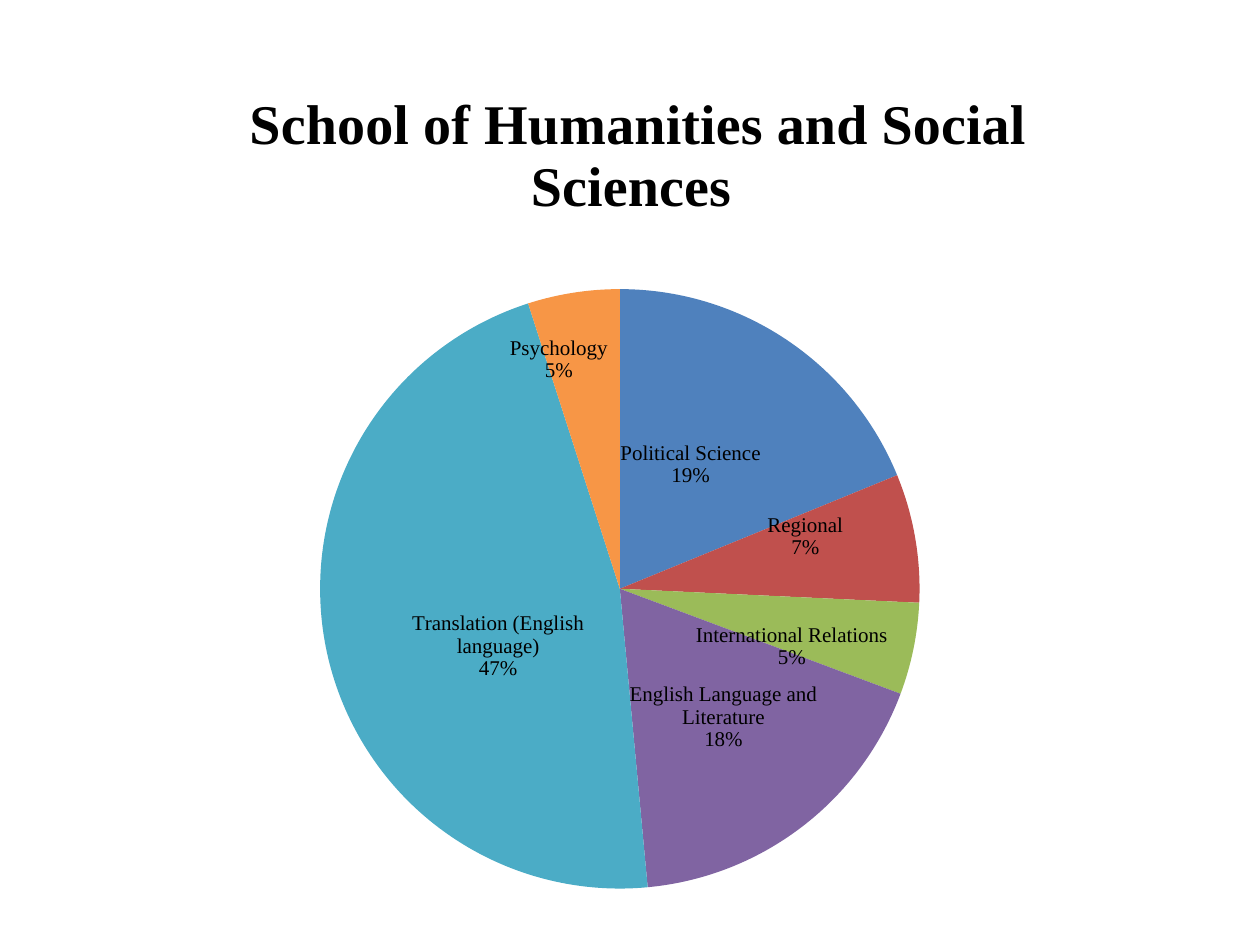
from dataclasses import dataclass

from lxml import etree
from pptx import Presentation
from pptx.chart.data import CategoryChartData
from pptx.dml.color import RGBColor
from pptx.enum.chart import XL_CHART_TYPE, XL_LABEL_POSITION
from pptx.oxml.ns import qn
from pptx.util import Cm, Pt

PIE = XL_CHART_TYPE.PIE
CENTER = XL_LABEL_POSITION.CENTER


@dataclass(frozen=True)
class Theme:
    text: str = "000000"
    chart_font: str = "Calibri"
    heading_font: str = "Times New Roman"
    chart_size: int = 10
    label_size: int = 12
    title_size: int = 32


THEME = Theme()
TITLE = "School of Humanities and Social Sciences "

# Programme, share, slice colour, label shift (fractions of the chart)
PROGRAMMES = [
    ("Political Science", 19, "4F81BD", (-0.01, 0)),
    ("Regional", 7, "C0504D", (0.03, -0.03)),
    ("International relations", 5, "9BBB59", (0.02, 0.03)),
    ("English Language and Literature", 18, "8064A2", (0.01, 0.01)),
    ("Translation (English language)", 47, "4BACC6", (0.02, 0.03)),
    ("Psychology", 5, "F79646", (-0.03, -0.09)),
]
CUSTOM_LABELS = {2: "International Relations\n5%"}


def style_font(font, name, size, bold=False):
    font.name = name
    font.size = Pt(size)
    font.bold = bold
    font.color.rgb = RGBColor.from_string(THEME.text)


def make_layout(**values):
    """Build a manual chart layout from its named settings."""
    layout = etree.Element(qn("c:layout"))
    manual = etree.SubElement(layout, qn("c:manualLayout"))
    for name, value in values.items():
        etree.SubElement(manual, qn(f"c:{name}")).set("val", str(value))
    return layout


def replace_layout(parent, layout, position):
    for old in parent.findall(qn("c:layout")):
        parent.remove(old)
    parent.insert(position, layout)


def add_separator(element):
    """Put the percentage on a line below the category name."""
    separator = etree.Element(qn("c:separator"))
    separator.text = "\n"
    element.find(qn("c:showBubbleSize")).addnext(separator)


def add_pie(slide):
    data = CategoryChartData()
    data.categories = [name for name, *_ in PROGRAMMES]
    data.add_series("Series 1", [share for _, share, *_ in PROGRAMMES])
    frame = slide.shapes.add_chart(PIE, Cm(0), Cm(0.79), Cm(25.4), Cm(18.26), data)
    chart = frame.chart
    chart.has_legend = False
    chart.plots[0].vary_by_categories = True
    style_font(chart.font, THEME.chart_font, THEME.chart_size)
    plot_area = chart.plots[0]._element.getparent()
    layout = make_layout(layoutTarget="inner", xMode="edge", yMode="edge",
                         x=0.254, y=0.276, w=0.476, h=0.662)
    replace_layout(plot_area, layout, 0)
    return chart


def add_title(chart):
    chart.has_title = True
    title = chart.chart_title
    title.text_frame.text = TITLE
    span = title.text_frame.paragraphs[0].runs[0]
    style_font(span.font, THEME.heading_font, THEME.title_size, bold=True)
    replace_layout(title._element,
                   make_layout(xMode="edge", yMode="edge", x=0.19, y=0.043), 1)
    title.include_in_layout = False


def label_slice(series, index, shift):
    label = series.points[index].data_label
    if index in CUSTOM_LABELS:
        label.text_frame.text = CUSTOM_LABELS[index]
        for para in label.text_frame.paragraphs:
            for span in para.runs:
                style_font(span.font, THEME.heading_font, THEME.label_size)
    else:
        style_font(label.font, THEME.heading_font, THEME.label_size)
    label.position = CENTER
    element = next(item for item in series.data_labels._element.findall(qn("c:dLbl"))
                   if item.find(qn("c:idx")).get("val") == str(index))
    for flag, shown in (("showVal", 0), ("showCatName", 1), ("showPercent", 1)):
        element.find(qn(f"c:{flag}")).set("val", str(shown))
    replace_layout(element, make_layout(x=shift[0], y=shift[1]), 1)
    add_separator(element)


def style_slices(series):
    labels = series.data_labels
    style_font(labels.font, THEME.heading_font, THEME.label_size)
    labels.show_value = False
    labels.show_category_name = True
    labels.show_percentage = True
    for index, (_, _, color, shift) in enumerate(PROGRAMMES):
        fill = series.points[index].format.fill
        fill.solid()
        fill.fore_color.rgb = RGBColor.from_string(color)
        label_slice(series, index, shift)
    add_separator(labels._element)


def main():
    deck = Presentation()
    deck.slide_width, deck.slide_height = Cm(25.4), Cm(19.05)
    slide = deck.slides.add_slide(deck.slide_layouts[6])

    # Pie of programmes with its title and slice labels
    chart = add_pie(slide)
    add_title(chart)
    style_slices(chart.plots[0].series[0])

    deck.save("out.pptx")


if __name__ == "__main__":
    main()
